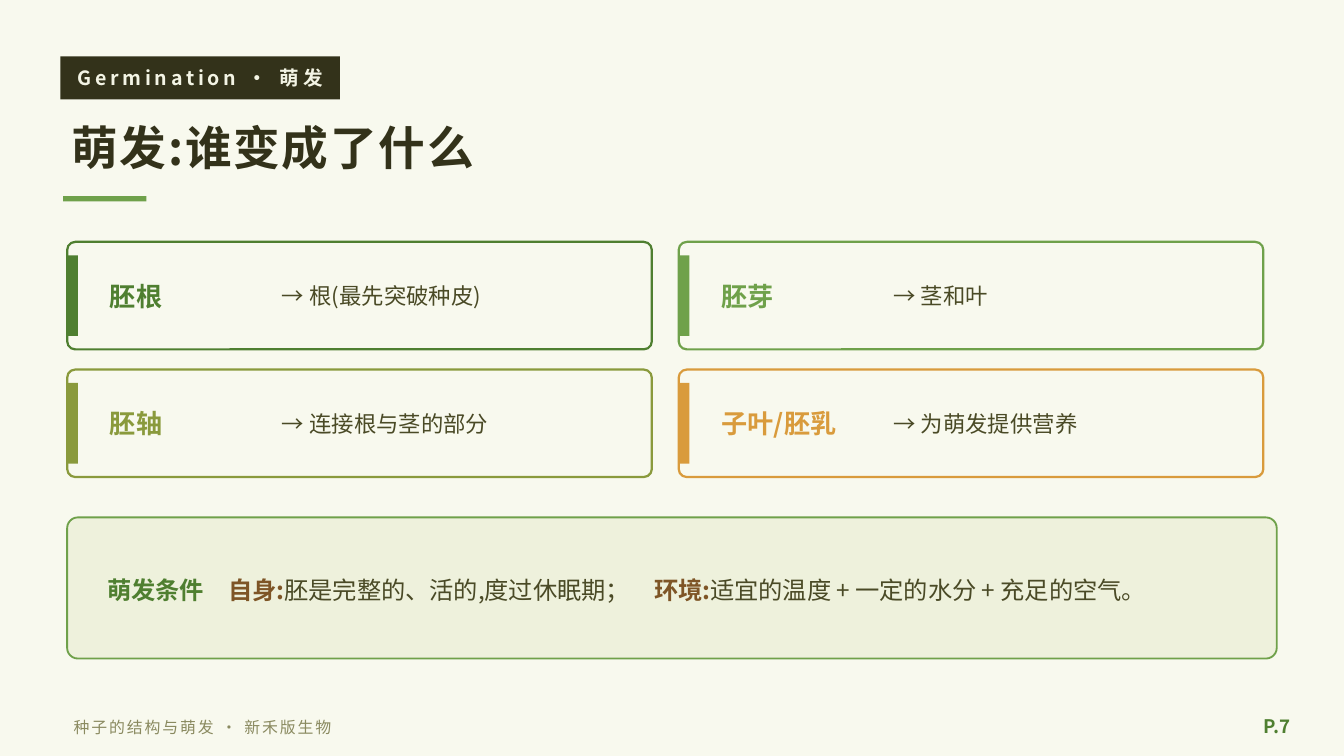
from lxml import etree
from pptx import Presentation
from pptx.dml.color import RGBColor
from pptx.enum.shapes import MSO_SHAPE
from pptx.enum.text import MSO_ANCHOR, PP_ALIGN
from pptx.oxml.ns import qn
from pptx.util import Pt

RECT, ROUNDED = MSO_SHAPE.RECTANGLE, MSO_SHAPE.ROUNDED_RECTANGLE
LEFT, CENTER, RIGHT = PP_ALIGN.LEFT, PP_ALIGN.CENTER, PP_ALIGN.RIGHT
MIDDLE = MSO_ANCHOR.MIDDLE
FONT = "Noto Sans CJK SC"

COLORS = {
    "paper": "F8F9EE", "panel": "EEF1DC", "cream": "F3F4E4",
    "ink": "33321A", "body": "4A4A26", "muted": "8A8A60",
    "dark_green": "4F7F30", "green": "6FA14A", "olive": "8A9A3C",
    "amber": "D99B3C", "brown": "7E5526",
}

# Content
BADGE = "Germination · 萌发"
TITLE = "萌发:谁变成了什么"
CARDS = [
    ("胚根", "→ 根(最先突破种皮)", "dark_green"),
    ("胚芽", "→ 茎和叶", "green"),
    ("胚轴", "→ 连接根与茎的部分", "olive"),
    ("子叶/胚乳", "→ 为萌发提供营养", "amber"),
]
CONDITIONS = [  # text, colour, bold
    ("萌发条件　", "dark_green", True),
    ("自身:", "brown", True),
    ("胚是完整的、活的,度过休眠期；　", "body", False),
    ("环境:", "brown", True),
    ("适宜的温度 + 一定的水分 + 充足的空气。", "body", False),
]
FOOTER = "种子的结构与萌发 · 新禾版生物"
PAGE_NUMBER = "P.7"

# Card grid, in points
CARD_LEFT, CARD_TOP = 36, 129.6
CARD_WIDTH, CARD_HEIGHT = 313.2, 57.6
COLUMN_STEP, ROW_STEP = 327.6, 68.4
CARD_COLUMNS = 2


def rgb(name):
    return RGBColor.from_string(COLORS[name])


def place(shape, left, top, width, height):
    shape.left, shape.top = Pt(left), Pt(top)
    shape.width, shape.height = Pt(width), Pt(height)


def add_block(page, kind, area, fill, line=None, line_width=1, radius=0):
    block = page.shapes.add_shape(kind, *map(Pt, area))
    block.shadow.inherit = False
    block.fill.solid()
    block.fill.fore_color.rgb = rgb(fill)
    if line:
        block.line.color.rgb = rgb(line)
        block.line.width = Pt(line_width)
    else:
        block.line.fill.background()
    if radius:
        block.adjustments[0] = radius
    return block


def style(span, size, color, bold=False, spacing=0):
    font = span.font
    font.name, font.size, font.bold = FONT, Pt(size), bold
    font.color.rgb = rgb(color)
    properties = span._r.get_or_add_rPr()
    etree.SubElement(properties, qn("a:ea"), typeface=FONT)
    if spacing:
        properties.set("spc", str(spacing * 100))


def write(shape, text, size, color, bold=False, spacing=0, align=LEFT):
    frame = shape.text_frame
    frame.word_wrap = True
    frame.vertical_anchor = MIDDLE
    frame.text = text
    para = frame.paragraphs[0]
    para.alignment = align
    style(para.runs[0], size, color, bold, spacing)


def add_text(page, area, *args, **kwargs):
    write(page.shapes.add_textbox(*map(Pt, area)), *args, **kwargs)


def add_card(page, left, top, part, result, color):
    add_block(page, ROUNDED, (left, top, CARD_WIDTH, CARD_HEIGHT),
              "paper", color, 1.2, 0.075)
    add_block(page, RECT, (left, top + 7.2, 5.76, CARD_HEIGHT - 14.4), color)
    add_text(page, (left + 15.84, top, 108, CARD_HEIGHT),
             part, 14, color, bold=True)
    add_text(page, (left + 108, top, 194.4, CARD_HEIGHT), result, 12, "body")


def add_conditions(page):
    add_block(page, ROUNDED, (36, 277.2, 648, 75.6),
              "panel", "green", 1, 0.076)
    box = page.shapes.add_textbox(Pt(50.4), Pt(288), Pt(619.2), Pt(54))
    frame = box.text_frame
    frame.word_wrap = True
    frame.vertical_anchor = MIDDLE
    para = frame.paragraphs[0]
    para.line_spacing = Pt(18)
    for text, color, bold in CONDITIONS:
        span = para.add_run()
        span.text = text
        style(span, 13, color, bold)


def main():
    deck = Presentation()
    deck.slide_width, deck.slide_height = Pt(720), Pt(405)
    page = deck.slides.add_slide(deck.slide_layouts[5])
    page.background.fill.solid()
    page.background.fill.fore_color.rgb = rgb("paper")

    # Heading
    badge = add_block(page, RECT, (32.4, 30.24, 149.76, 23.04), "ink")
    write(badge, BADGE, 10.5, "cream", True, 2, CENTER)
    badge.text_frame.word_wrap = False
    title = page.shapes.title
    place(title, 30.96, 56.16, 648, 44.64)
    write(title, TITLE, 25, "ink", True, 1)
    add_block(page, RECT, (33.84, 105.12, 44.64, 2.88), "green")

    # Cards
    for index, card in enumerate(CARDS):
        row, column = divmod(index, CARD_COLUMNS)
        add_card(page, CARD_LEFT + column * COLUMN_STEP,
                 CARD_TOP + row * ROW_STEP, *card)

    # Germination conditions
    add_conditions(page)

    # Footer
    add_text(page, (32.4, 378.72, 468, 21.6), FOOTER, 8.5, "muted", spacing=1)
    add_text(page, (655.2, 377.28, 43.2, 23.04), PAGE_NUMBER, 10,
             "dark_green", bold=True, align=RIGHT)

    deck.save("out.pptx")


if __name__ == "__main__":
    main()
